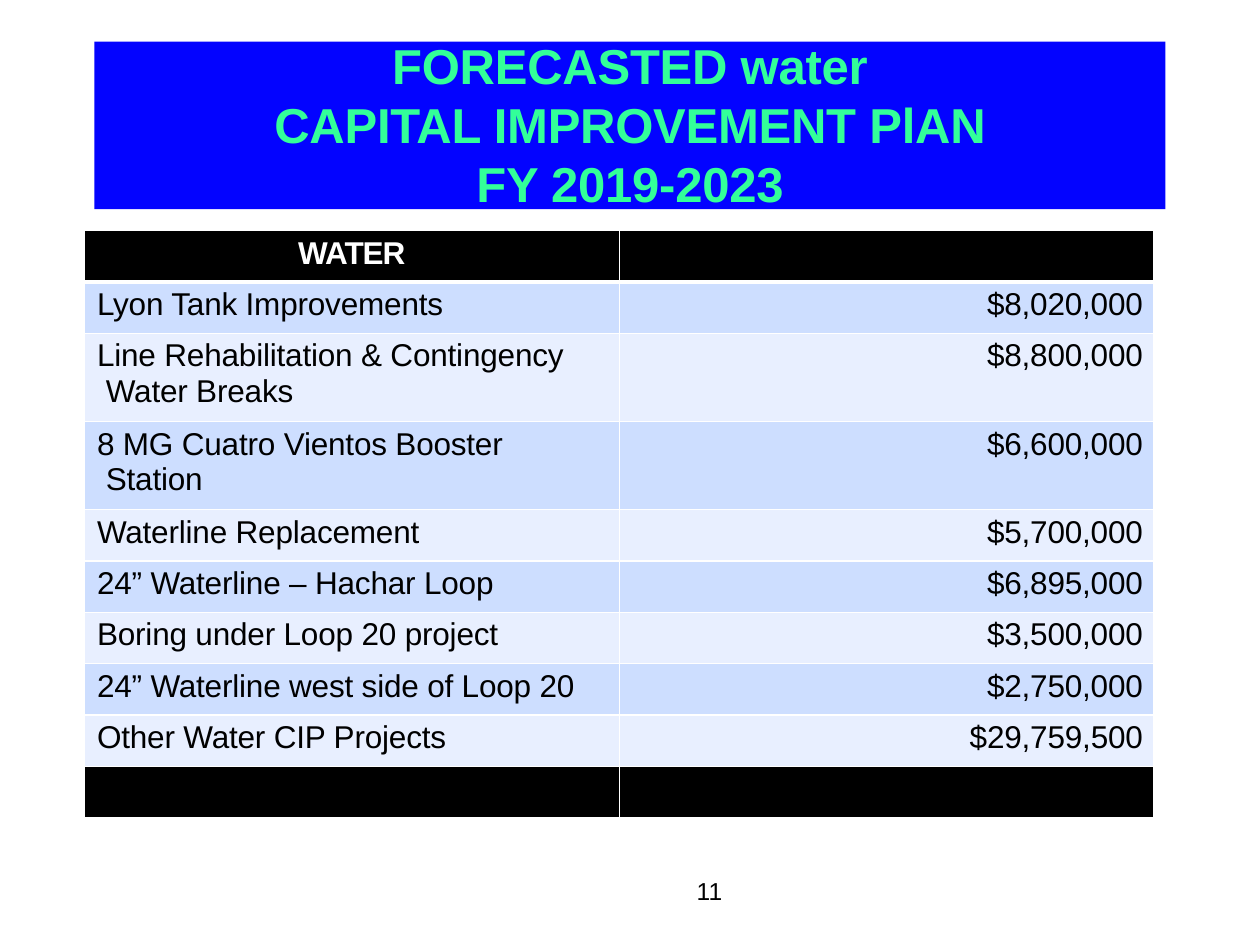
from lxml import etree
from pptx import Presentation
from pptx.dml.color import RGBColor
from pptx.enum.shapes import MSO_SHAPE
from pptx.enum.text import MSO_ANCHOR, PP_ALIGN
from pptx.oxml.ns import qn
from pptx.util import Inches, Pt

LEFT, CENTER, RIGHT = PP_ALIGN.LEFT, PP_ALIGN.CENTER, PP_ALIGN.RIGHT
TOP = MSO_ANCHOR.TOP
RECTANGLE = MSO_SHAPE.RECTANGLE

THEME = {
    "font": "Arial",
    "banner": "0303FF", "title": "33FF99",
    "dark": "000000", "light": "FFFFFF",
    "bands": ("CDDEFF", "E8EFFF"),
    "title_size": 28, "table_size": 18, "number_size": 14,
}
SLIDE_W, SLIDE_H = Inches(10), Inches(7.5)

PROJECTS = [
    ("Lyon Tank Improvements", "$8,020,000"),
    ("Line Rehabilitation & Contingency\vWater Breaks", "$8,800,000"),
    ("8 MG Cuatro Vientos Booster\vStation", "$6,600,000"),
    ("Waterline Replacement", "$5,700,000"),
    ("24” Waterline – Hachar Loop", "$6,895,000"),
    ("Boring under Loop 20 project", "$3,500,000"),
    ("24” Waterline west side of Loop 20", "$2,750,000"),
    ("Other Water CIP Projects", "$29,759,500"),
]


def write(paragraph, text, size, color, align=LEFT, bold=False, tracking=-0.1):
    """Fill one paragraph and format its font; tracking is in points."""
    paragraph.text = text
    paragraph.alignment = align
    for run in paragraph.runs:
        style = {"name": THEME["font"], "size": Pt(size), "bold": bold}
        for key, value in style.items():
            setattr(run.font, key, value)
        run.font.color.rgb = RGBColor.from_string(color)
        run.font._element.set("spc", str(round(tracking * 100)))


def dress_cell(cell, fill, top=1, bottom=1):
    """Set a cell's fill, margins and white borders; widths are in points."""
    cell.fill.solid()
    cell.fill.fore_color.rgb = RGBColor.from_string(fill)
    margins = {"margin_left": 0, "margin_right": 0,
               "margin_top": Inches(0.04), "margin_bottom": 0}
    for key, value in margins.items():
        setattr(cell, key, value)
    properties = cell._tc.get_or_add_tcPr()
    sides = {"a:lnL": 1, "a:lnR": 1, "a:lnT": top, "a:lnB": bottom}
    for position, (side, width) in enumerate(sides.items()):
        line = etree.Element(qn(side), w=str(Pt(width)))
        solid = etree.SubElement(line, qn("a:solidFill"))
        etree.SubElement(solid, qn("a:srgbClr"), val=THEME["light"])
        properties.insert(position, line)


presentation = Presentation()
presentation.slide_width, presentation.slide_height = SLIDE_W, SLIDE_H
slide = presentation.slides.add_slide(presentation.slide_layouts[6])
no_margins = dict.fromkeys(
    ("margin_left", "margin_top", "margin_right", "margin_bottom"), 0)

# Title banner
banner = slide.shapes.add_shape(
    RECTANGLE, int(SLIDE_W * 0.075), Inches(0.33),
    int(SLIDE_W * 0.85), Inches(1.33))
banner.shadow.inherit = False
banner.fill.solid()
banner.fill.fore_color.rgb = RGBColor.from_string(THEME["banner"])
banner.line.fill.background()
title = banner.text_frame
for key, value in {**no_margins, "word_wrap": True,
                   "vertical_anchor": TOP}.items():
    setattr(title, key, value)
title_lines = [("FORECASTED water", 30.4),
               ("CAPITAL IMPROVEMENT PlAN\vFY 2019-2023", 33.6)]
for index, (text, spacing) in enumerate(title_lines):
    paragraph = title.add_paragraph() if index else title.paragraphs[0]
    write(paragraph, text, THEME["title_size"], THEME["title"], CENTER, True)
    paragraph.line_spacing = Pt(spacing)

# Table grid: two equal columns, tall rows where a project takes two lines
TABLE_W, TABLE_H, TALL_ROW = Inches(8.49), Inches(4.66), Inches(0.7)
row_count = len(PROJECTS) + 2
tall_rows = [row for row, (project, _) in enumerate(PROJECTS, 1)
             if "\v" in project]
short_row = (TABLE_H - TALL_ROW * len(tall_rows)) // (row_count - len(tall_rows))
budget = slide.shapes.add_table(
    row_count, 2, Inches(0.67), Inches(1.83), TABLE_W, TABLE_H).table
for column in budget.columns:
    column.width = TABLE_W // 2
for index, row in enumerate(budget.rows):
    row.height = TALL_ROW if index in tall_rows else short_row

# Header and closing rows
for column in range(2):
    dress_cell(budget.cell(0, column), THEME["dark"], bottom=3)
    dress_cell(budget.cell(row_count - 1, column), THEME["dark"])
write(budget.cell(0, 0).text_frame.paragraphs[0], "WATER",
      THEME["table_size"], THEME["light"], CENTER, True, -0.6)

# Project rows
for row, (project, amount) in enumerate(PROJECTS, 1):
    for column, (text, align) in enumerate(((project, LEFT), (amount, RIGHT))):
        cell = budget.cell(row, column)
        dress_cell(cell, THEME["bands"][(row - 1) % 2], top=3 if row == 1 else 1)
        paragraph = cell.text_frame.paragraphs[0]
        write(paragraph, text, THEME["table_size"], THEME["dark"], align)
        if align == LEFT:
            # Second lines hang slightly to the right of the first
            indent = paragraph._p.get_or_add_pPr()
            indent.set("marL", str(Inches(0.17)))
            indent.set("indent", str(-Inches(0.07)))
        else:
            cell.margin_right = Inches(0.09)

# Page number
page_number = slide.shapes.add_textbox(
    int(SLIDE_W * 0.55), int(SLIDE_H * 0.928), Inches(0.26), Inches(0.25)).text_frame
for key, value in {**no_margins, "margin_left": Inches(0.03),
                   "word_wrap": True}.items():
    setattr(page_number, key, value)
write(page_number.paragraphs[0], "11", THEME["number_size"], THEME["dark"],
      tracking=0)
page_number.paragraphs[0].line_spacing = Pt(16.5)

presentation.save("out.pptx")
